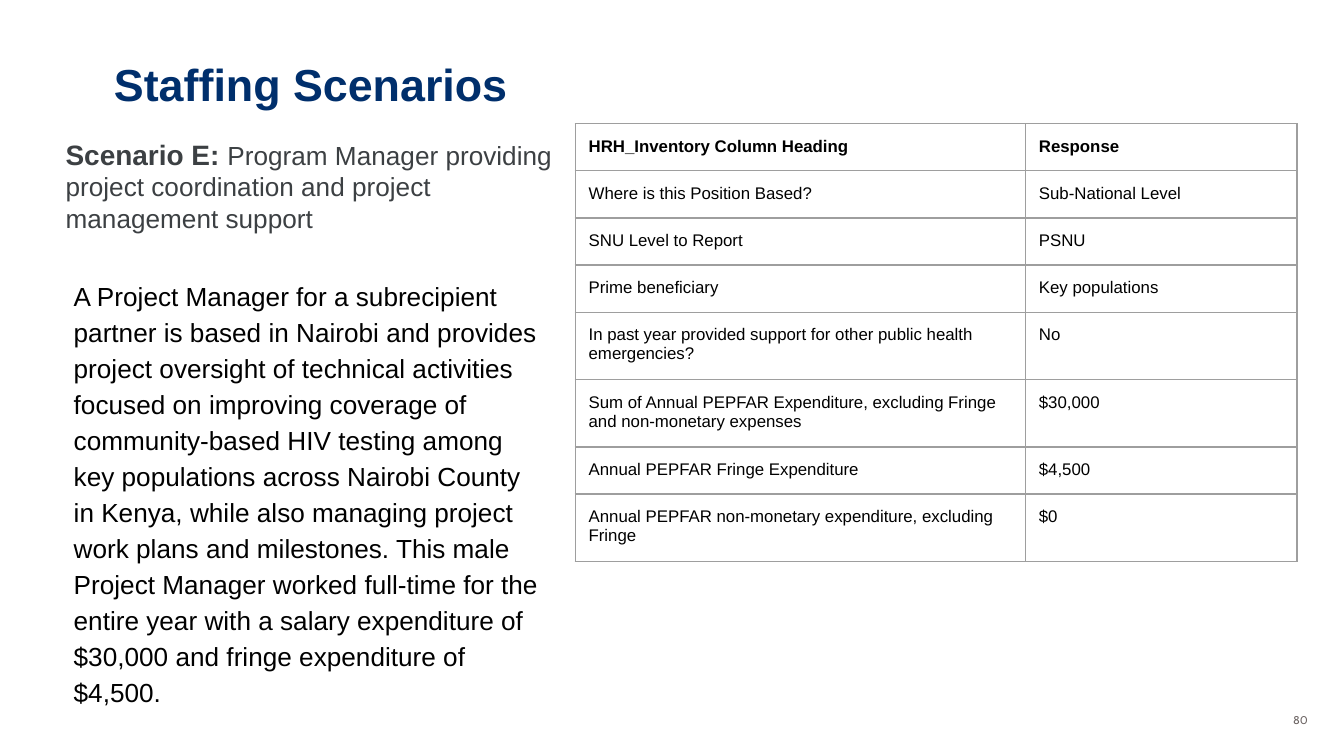
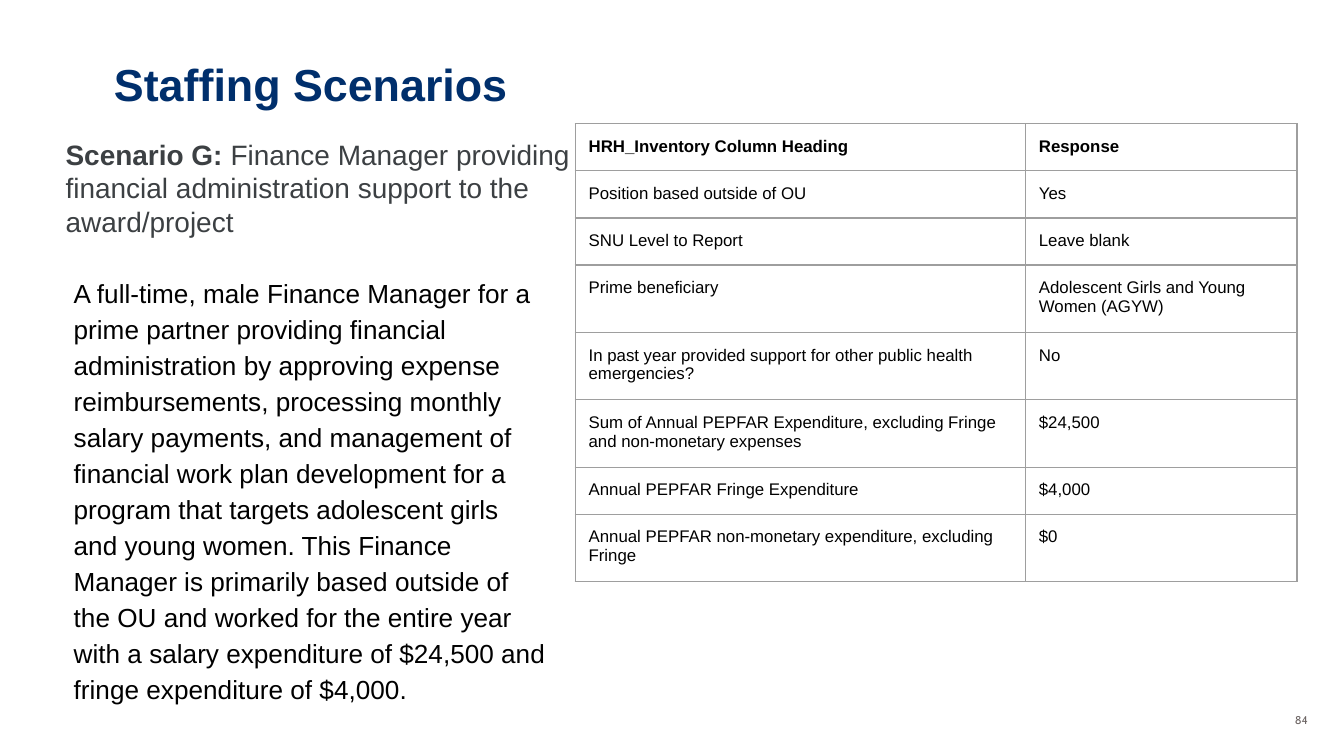
from dataclasses import dataclass

from lxml import etree
from pptx import Presentation
from pptx import util as u
from pptx.dml.color import RGBColor
from pptx.enum import text
from pptx.oxml.ns import qn

PX = u.Inches(1) // 100


@dataclass(frozen=True)
class Theme:
    navy: str = "002F6C"
    slate: str = "3C4043"
    black: str = "000000"
    footer_grey: str = "6C6463"
    rule_grey: str = "9E9E9E"
    body_font: str = "Arial"
    number_font: str = "Cabin"
    title_size: int = 24
    label_size: int = 15
    body_size: int = 14
    table_size: int = 9
    number_size: int = 6
    rule_width: float = 0.75
    inset: int = 10


COLUMN_WIDTHS = (335, 202)
ROW_HEIGHTS = (35, 35, 35, 35, 31, 31, 28, 28)
TABLE_HEIGHT = 328
SHARED_QUESTIONS = (
    "SNU Level to Report",
    "Prime beneficiary",
    "In past year provided support for other public health emergencies?",
    "Sum of Annual PEPFAR Expenditure, excluding Fringe and non-monetary expenses",
    "Annual PEPFAR Fringe Expenditure",
    "Annual PEPFAR non-monetary expenditure, excluding Fringe",
)

SCENARIOS = (
    dict(
        number="80",
        label="Scenario E: ",
        role="Program Manager providing project coordination and project management support",
        role_size=14,
        story_top=195,
        story="A Project Manager for a subrecipient partner is based in Nairobi and "
              "provides project oversight of technical activities focused on improving "
              "coverage of community-based HIV testing among key populations across "
              "Nairobi County in Kenya, while also managing project work plans and "
              "milestones. This male Project Manager worked full-time for the entire "
              "year with a salary expenditure of $30,000 and fringe expenditure of $4,500.",
        location_question="Where is this Position Based?",
        responses=("Sub-National Level", "PSNU", "Key populations", "No",
                   "$30,000", "$4,500", "$0"),
    ),
    dict(
        number="84",
        label="Scenario G: ",
        role="Finance Manager providing financial administration support to the award/project",
        role_size=15,
        story_top=193,
        story="A full-time, male Finance Manager for a prime partner providing financial "
              "administration by approving expense reimbursements, processing monthly "
              "salary payments, and management of financial work plan development for a "
              "program that targets adolescent girls and young women. This Finance "
              "Manager is primarily based outside of the OU and worked for the entire "
              "year with a salary expenditure of $24,500 and fringe expenditure of $4,000.",
        location_question="Position based outside of OU",
        responses=("Yes", "Leave blank", "Adolescent Girls and Young Women (AGYW)",
                   "No", "$24,500", "$4,000", "$0"),
    ),
)


class Deck:
    def __init__(self, theme):
        self.theme = theme
        self.presentation = Presentation()
        self.presentation.slide_width = 1000 * PX
        self.presentation.slide_height = u.Inches(5.625)
        self.slide = None

    def new_slide(self):
        self.slide = self.presentation.slides.add_slide(
            self.presentation.slide_layouts[6])

    def style(self, font, size, color, bold=False, name=None):
        font.name = name or self.theme.body_font
        font.size = u.Pt(size)
        font.bold = bold
        font.color.rgb = RGBColor.from_string(color)

    def set_insets(self, holder, vertical=None):
        side = self.theme.inset * PX
        holder.margin_left = holder.margin_right = side
        holder.margin_top = holder.margin_bottom = (
            side if vertical is None else vertical * PX)

    def text_box(self, left, top, width, height, anchor=text.MSO_ANCHOR.TOP,
                 vertical_inset=None):
        box = self.slide.shapes.add_textbox(
            left * PX, top * PX, width * PX, height * PX)
        frame = box.text_frame
        frame.word_wrap = True
        frame.vertical_anchor = anchor
        self.set_insets(frame, vertical_inset)
        return frame.paragraphs[0]

    def title(self, words):
        heading = self.text_box(75, 42, 850, 50, text.MSO_ANCHOR.BOTTOM)
        heading.text = words
        self.style(heading.font, self.theme.title_size, self.theme.navy, bold=True)

    def page_number(self, number):
        footer = self.text_box(750, 526, 233, 20, text.MSO_ANCHOR.MIDDLE, 5)
        footer.text = number
        footer.alignment = text.PP_ALIGN.RIGHT
        self.style(footer.font, self.theme.number_size, self.theme.footer_grey,
                   name=self.theme.number_font)

    def scenario(self, label, role, role_size):
        summary = self.text_box(39, 92, 396, 95)
        for words, size, bold in ((label, self.theme.label_size, True),
                                  (role, role_size, False)):
            run = summary.add_run()
            run.text = words
            self.style(run.font, size, self.theme.slate, bold)

    def story(self, words, top):
        narrative = self.text_box(45, top, 371, 342)
        narrative.text = words
        narrative.line_spacing = 1.15
        narrative.space_before = narrative.space_after = u.Pt(12)
        self.style(narrative.font, self.theme.body_size, self.theme.black)

    def rule_cell(self, cell):
        properties = cell._tc.get_or_add_tcPr()
        for position, side in enumerate(("a:lnL", "a:lnR", "a:lnT", "a:lnB")):
            rule = etree.Element(qn(side), w=str(u.Pt(self.theme.rule_width)))
            fill = etree.SubElement(rule, qn("a:solidFill"))
            etree.SubElement(fill, qn("a:srgbClr"), val=self.theme.rule_grey)
            properties.insert(position, rule)

    def inventory(self, rows):
        frame = self.slide.shapes.add_table(
            len(rows), len(COLUMN_WIDTHS), 428 * PX, 92 * PX,
            sum(COLUMN_WIDTHS) * PX, TABLE_HEIGHT * PX)
        table = frame.table
        table.first_row = table.horz_banding = False
        for column, width in zip(table.columns, COLUMN_WIDTHS):
            column.width = width * PX
        for row, height in zip(table.rows, ROW_HEIGHTS):
            row.height = height * PX
        frame.height = TABLE_HEIGHT * PX
        for row_index, entries in enumerate(rows):
            for column_index, words in enumerate(entries):
                cell = table.cell(row_index, column_index)
                cell.text = words
                cell.fill.background()
                self.set_insets(cell)
                self.rule_cell(cell)
                self.style(cell.text_frame.paragraphs[0].font, self.theme.table_size,
                           self.theme.black, bold=row_index == 0)


def main():
    deck = Deck(Theme())
    for case in SCENARIOS:
        questions = (case["location_question"], *SHARED_QUESTIONS)
        deck.new_slide()
        deck.title("Staffing Scenarios")
        deck.page_number(case["number"])
        deck.scenario(case["label"], case["role"], case["role_size"])
        deck.inventory([("HRH_Inventory Column Heading", "Response"),
                        *zip(questions, case["responses"])])
        deck.story(case["story"], case["story_top"])
    deck.presentation.save("out.pptx")


if __name__ == "__main__":
    main()
